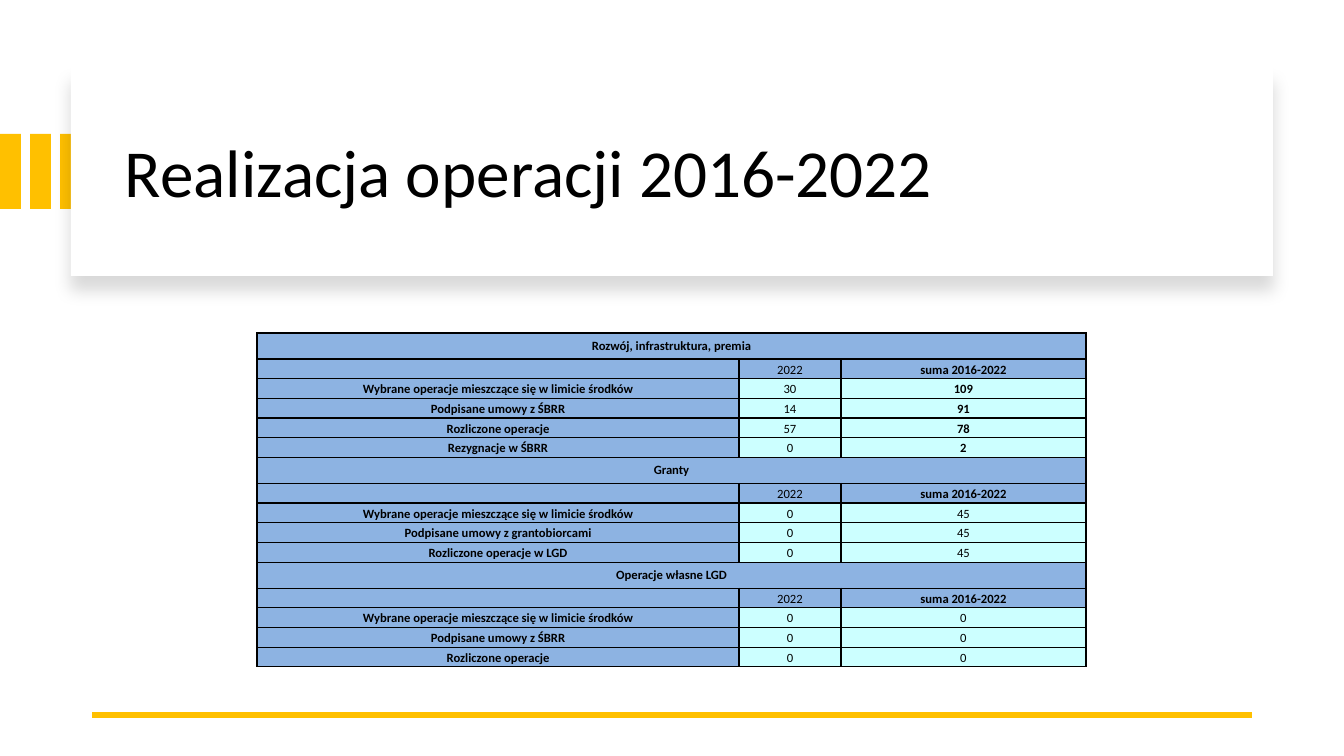
from lxml.etree import SubElement
from pptx import Presentation
from pptx.dml.color import RGBColor
from pptx.enum.shapes import MSO_CONNECTOR, MSO_SHAPE
from pptx.enum.text import MSO_ANCHOR, PP_ALIGN
from pptx.oxml.ns import qn
from pptx.util import Pt

TITLE = "Realizacja operacji 2016-2022"
COLUMN_HEADS = ("", "2022", "suma 2016-2022")
SECTIONS = [
    {"name": "Rozwój, infrastruktura, premia", "bold_sums": True, "operations": [
        ("Wybrane operacje mieszczące się w limicie środków", "30", "109"),
        ("Podpisane umowy z ŚBRR", "14", "91"),
        ("Rozliczone operacje", "57", "78"),
        ("Rezygnacje w ŚBRR", "0", "2"),
    ]},
    {"name": "Granty", "bold_sums": False, "operations": [
        ("Wybrane operacje mieszczące się w limicie środków", "0", "45"),
        ("Podpisane umowy z grantobiorcami", "0", "45"),
        ("Rozliczone operacje w LGD", "0", "45"),
    ]},
    {"name": "Operacje własne LGD", "bold_sums": False, "operations": [
        ("Wybrane operacje mieszczące się w limicie środków", "0", "0"),
        ("Podpisane umowy z ŚBRR", "0", "0"),
        ("Rozliczone operacje", "0", "0"),
    ]},
]

COLORS = {"accent": "FFC000", "card": "FFFFFF", "text": "000000",
          "heading": "8DB3E2", "value": "CCFFFF", "border": "000000"}
FONT = "Calibri"
PX = 914400 / 100.8

SLIDE = (1344, 756)
CARD = (71, 67, 1202, 209)
TITLE_BOX = (115, 90, 1122, 171)
BARS, BAR_STEP, BAR_TOP, BAR_SIZE = 3, 30, 134, (21, 75)
RULE_LEFT, RULE_RIGHT, RULE_TOP = 92, 1252, 715
TABLE_LEFT, TABLE_TOP, TABLE_HEIGHT = 257, 333, 334
COLUMN_WIDTHS = (482, 102, 245)
SECTION_HEIGHT = 26

CELL_FORMAT = {"vertical_anchor": MSO_ANCHOR.MIDDLE, "margin_left": Pt(1.5),
               "margin_top": Pt(0.7), "margin_right": Pt(1.5), "margin_bottom": 0}
SECTION_FORMAT = {"vertical_anchor": MSO_ANCHOR.TOP, "margin_left": Pt(5.4),
                  "margin_top": Pt(2.9), "margin_right": Pt(5.4), "margin_bottom": Pt(2.9)}
PARAGRAPH_FORMAT = {"alignment": PP_ALIGN.CENTER, "line_spacing": 1.07, "space_after": Pt(8)}


def emu(*lengths):
    return [round(length * PX) for length in lengths]


def rgb(name):
    return RGBColor.from_string(COLORS[name])


def apply(target, values):
    for attribute, value in values.items():
        setattr(target, attribute, value)


def add_block(slide, box, color):
    block = slide.shapes.add_shape(MSO_SHAPE.RECTANGLE, *emu(*box))
    block.shadow.inherit = False
    block.fill.solid()
    block.fill.fore_color.rgb = rgb(color)
    block.line.fill.background()
    return block


def add_soft_shadow(block):
    effects = block._element.spPr.find(qn("a:effectLst"))
    shadow = SubElement(effects, qn("a:outerShdw"), blurRad=str(Pt(11)), dist=str(Pt(10)),
                        dir="5400000", algn="t", rotWithShape="0")
    shade = SubElement(shadow, qn("a:srgbClr"), val=COLORS["text"])
    SubElement(shade, qn("a:alpha"), val="15000")


def write(paragraph, text, size, bold=False):
    run = paragraph.add_run()
    run.text = text
    apply(run.font, {"name": FONT, "size": Pt(size), "bold": bold})
    run.font.color.rgb = rgb("text")


def add_title(slide):
    frame = slide.shapes.add_textbox(*emu(*TITLE_BOX)).text_frame
    apply(frame, {"word_wrap": True, "vertical_anchor": MSO_ANCHOR.MIDDLE})
    frame.paragraphs[0].line_spacing = 0.9
    write(frame.paragraphs[0], TITLE, 48)


def add_rule(slide):
    rule = slide.shapes.add_connector(
        MSO_CONNECTOR.STRAIGHT, *emu(RULE_RIGHT, RULE_TOP, RULE_LEFT, RULE_TOP))
    rule.line.color.rgb = rgb("accent")
    rule.line.width = Pt(4.5)
    SubElement(rule._element.spPr, qn("a:effectLst"))


def add_borders(cell):
    """Outline a cell; its fill is set afterwards so that it follows the lines."""
    for side in ("lnL", "lnR", "lnT", "lnB"):
        line = SubElement(cell._tc.get_or_add_tcPr(), qn(f"a:{side}"), w=str(Pt(1)))
        paint = SubElement(line, qn("a:solidFill"))
        SubElement(paint, qn("a:srgbClr"), val=COLORS["border"])


def fill_cell(cell, text, color, bold, cell_format=CELL_FORMAT):
    add_borders(cell)
    cell.fill.solid()
    cell.fill.fore_color.rgb = rgb(color)
    apply(cell, cell_format)
    paragraph = cell.text_frame.paragraphs[0]
    apply(paragraph, PARAGRAPH_FORMAT)
    if text:
        write(paragraph, text, 9, bold)
    else:
        SubElement(paragraph._p, qn("a:endParaRPr"), sz="900")


def table_rows():
    """Give each row as (is_section, cells), a cell being (text, color, bold)."""
    for section in SECTIONS:
        yield True, [(section["name"], "heading", True)] + [("", "heading", False)] * 2
        yield False, [(head, "heading", head == COLUMN_HEADS[-1]) for head in COLUMN_HEADS]
        for label, year, total in section["operations"]:
            yield False, [(label, "heading", True), (year, "value", False),
                          (total, "value", section["bold_sums"])]


def add_operations_table(slide):
    rows = list(table_rows())
    row_height = (TABLE_HEIGHT - SECTION_HEIGHT * len(SECTIONS)) / (len(rows) - len(SECTIONS))
    table = slide.shapes.add_table(
        len(rows), len(COLUMN_WIDTHS),
        *emu(TABLE_LEFT, TABLE_TOP, sum(COLUMN_WIDTHS), TABLE_HEIGHT)).table
    apply(table, {"first_row": False, "horz_banding": False})
    for column, width in zip(table.columns, emu(*COLUMN_WIDTHS)):
        column.width = width
    for r, (is_section, cells) in enumerate(rows):
        table.rows[r].height = emu(SECTION_HEIGHT if is_section else row_height)[0]
        for c, content in enumerate(cells):
            fill_cell(table.cell(r, c), *content, SECTION_FORMAT if is_section else CELL_FORMAT)
        if is_section:
            table.cell(r, 0).merge(table.cell(r, len(cells) - 1))


def main():
    deck = Presentation()
    deck.slide_width, deck.slide_height = emu(*SLIDE)
    slide = deck.slides.add_slide(deck.slide_layouts[6])
    for i in range(BARS):
        add_block(slide, (i * BAR_STEP, BAR_TOP, *BAR_SIZE), "accent")
    add_soft_shadow(add_block(slide, CARD, "card"))
    add_title(slide)
    add_rule(slide)
    add_operations_table(slide)
    deck.save("out.pptx")


if __name__ == "__main__":
    main()
